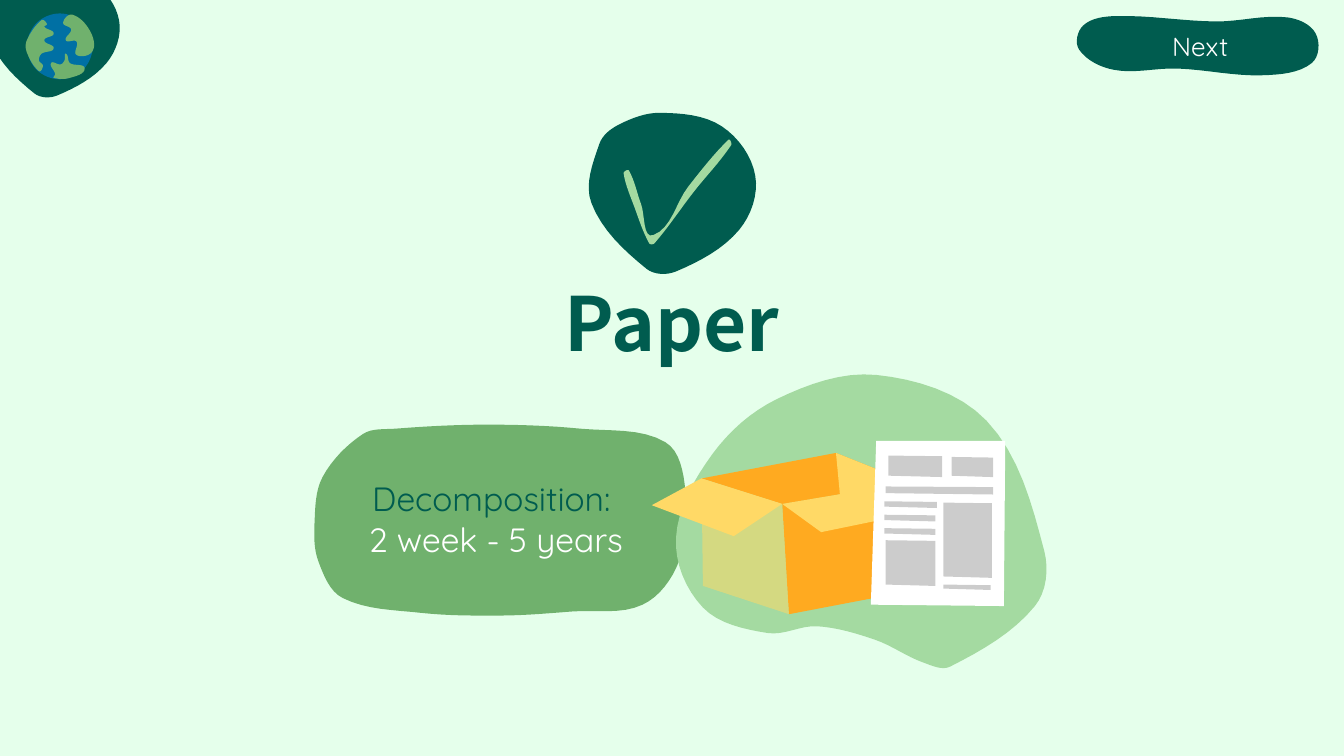
"""Build the "Paper" recycling slide with its decomposition time."""
import math
import pptx
import pptx.util
import pptx.dml.color
import pptx.enum.text
import pptx.oxml
import pptx.oxml.ns
from lxml import etree

PX = 9144
SLIDE_WIDTH = 1000
CURVE_STEPS = 8
RGB = pptx.dml.color.RGBColor
MINT = RGB.from_string("E5FFEB")
DARK_GREEN = RGB.from_string("005C4F")
LEAF_GREEN = RGB.from_string("70B16D")
PALE_GREEN = RGB.from_string("A4DAA1")
OCEAN = RGB.from_string("0070A4")
ORANGE = RGB.from_string("FFAA20")
YELLOW = RGB.from_string("FFD966")
WHITE = RGB.from_string("FFFFFF")
BLACK = RGB.from_string("000000")

LABELS = [
    ((78, 208, 844, 63), "Noto Sans CJK KR", 40, True, [("Paper", DARK_GREEN)]),
    ((260, 336, 218, 100), "Quicksand", 18, False,
     [("Decomposition: ", DARK_GREEN), ("2 week - 5 years", WHITE)]),
    ((817, 14, 152, 41), "Quicksand", 14, False, [("Next", WHITE)]),
]

TIME_PANEL = [
    (374, 458), (426, 455), (478, 450), (505, 418), (510, 365), (495, 329), (432, 319),
    (362, 316), (294, 319), (270, 323), (240, 355), (234, 390), (237, 418), (255, 445), (313, 456)]
NEXT_BUTTON = [
    (830, 12), (806, 19), (803, 37), (829, 52), (876, 51),
    (940, 56), (976, 47), (979, 25), (958, 13), (905, 16)]
BADGE = [
    (491, 84), (460, 93), (446, 107), (440, 151), (481, 200),
    (503, 202), (550, 171), (562, 131), (537, 94)]
CORNER = [((x - 438) * 0.78 - 8, (y - 84) * 0.78 - 21) for x, y in BADGE]
CHECK = [
    (542, 104), (512, 139), (486, 175), (477, 152), (468, 127), (464, 129),
    (472, 154), (483, 181), (487, 181), (516, 143), (544, 108)]
PAPER_BACKDROP = [
    (652, 279), (578, 297), (530, 338), (503, 400), (523, 452), (571, 471), (608, 466),
    (651, 476), (687, 493), (707, 496), (770, 451), (777, 410), (734, 313)]
GLOBE = [(44.5 + 24.5 * math.cos(k * math.pi / 4), 34.5 + 24.5 * math.sin(k * math.pi / 4))
         for k in range(8)]
LANDS = [
    [(31, 15), (20, 30), (20, 39), (29, 53), (32, 49), (29, 45),
     (31, 40), (40, 36), (33, 30), (40, 25), (33, 20), (35, 18)],
    [(54, 11), (47, 17), (53, 22), (49, 30), (57, 31), (57, 41), (69, 38), (67, 23)],
    [(49, 40), (48, 45), (45, 48), (38, 47), (41, 55), (40, 58), (52, 58), (63, 51), (52, 47)],
]

BOX_CORNERS = {
    "right": (677, 359), "front": (582, 375), "left": (522, 356), "back": (622, 337),
    "base left": (523, 436), "base front": (587, 457), "base right": (676, 440),
    "left flap": (485, 376), "front flap": (546, 399), "back fold": (626, 379),
    "right fold": (611, 396), "right flap": (713, 375),
}
BOX_FACES = [
    (ORANGE, 100, ["right", "front", "base front", "base right"]),
    (YELLOW, 53, ["left", "base left", "base front", "front"]),
    (ORANGE, 100, ["back", "left", "front", "right"]),
    (YELLOW, 100, ["left", "left flap", "front flap", "front"]),
    (YELLOW, 100, ["back", "back fold", "right"]),
    (YELLOW, 100, ["right", "front", "right fold", "right flap"]),
]
PAGE = [(652, 328), (648, 450), (747, 451), (748, 328)]
NEWS_BLOCKS = [
    (661, 339, 40, 15), (708, 340, 31, 14), (659, 362, 80, 5),
    (658, 373, 39, 4), (658, 383, 38, 4), (658, 393, 38, 4), (659, 402, 37, 33),
    (702, 374, 36, 55), (702, 435, 35, 3),
]


def trace(anchors):
    count = len(anchors)
    directions = []
    for i in range(count):
        (x0, y0), (x1, y1) = anchors[i - 1], anchors[(i + 1) % count]
        span = math.dist((x0, y0), (x1, y1))
        directions.append(((x1 - x0) / span, (y1 - y0) / span))
    outline = []
    for i in range(count):
        j = (i + 1) % count
        start, end = anchors[i], anchors[j]
        reach = math.dist(start, end) / 3
        first = [p + reach * d for p, d in zip(start, directions[i])]
        second = [p - reach * d for p, d in zip(end, directions[j])]
        for step in range(CURVE_STEPS):
            t = step / CURVE_STEPS
            weights = ((1 - t) ** 3, 3 * t * (1 - t) ** 2, 3 * t * t * (1 - t), t ** 3)
            outline.append(tuple(sum(w * point[axis] for w, point in
                                     zip(weights, (start, first, second, end)))
                                 for axis in (0, 1)))
    return outline


def tilt(left, top, width, height):
    right, bottom = left + width, top + height
    return [(left, top), (left, bottom), (right, bottom + 1), (right, top + 0.5)]


def draw(shapes, color, opacity, outline):
    corners = [(x * PX, y * PX) for x, y in outline]
    builder = shapes.build_freeform(*corners[0], scale=1.0)
    builder.add_line_segments(corners[1:], close=True)
    figure = builder.convert_to_shape()
    figure.shadow.inherit = False
    figure.fill.solid()
    figure.fill.fore_color.rgb = color
    figure.line.fill.background()
    if opacity < 100:
        fill_color = figure._element.spPr.find(".//" + pptx.oxml.ns.qn("a:srgbClr"))
        etree.SubElement(fill_color, pptx.oxml.ns.qn("a:alpha"), val=str(opacity * 1000))


def write(shapes, box, font_name, size, bold, lines):
    label = shapes.add_textbox(*(length * PX for length in box)).text_frame
    frame_format = {"word_wrap": True, "vertical_anchor": pptx.enum.text.MSO_ANCHOR.MIDDLE}
    frame_format.update({"margin_" + side: 10 * PX for side in ("left", "top", "right", "bottom")})
    for key, value in frame_format.items():
        setattr(label, key, value)
    paragraph = label.paragraphs[0]
    paragraph.alignment = pptx.enum.text.PP_ALIGN.CENTER
    for index, (words, color) in enumerate(lines):
        if index:
            paragraph.add_line_break()
        run = paragraph.add_run()
        run.text = words
        for key, value in {"name": font_name, "size": pptx.util.Pt(size), "bold": bold}.items():
            setattr(run.font, key, value)
        run.font.color.rgb = color


def main():
    deck = pptx.Presentation()
    deck.slide_width, deck.slide_height = SLIDE_WIDTH * PX, SLIDE_WIDTH * PX * 9 // 16
    slide = deck.slides.add_slide(deck.slide_layouts[6])
    slide.background.fill.solid()
    slide.background.fill.fore_color.rgb = MINT
    curved_groups = [
        [(LEAF_GREEN, TIME_PANEL)], [(DARK_GREEN, NEXT_BUTTON)],
        [(DARK_GREEN, BADGE), (PALE_GREEN, CHECK)],
        [(PALE_GREEN, PAPER_BACKDROP)], [(DARK_GREEN, CORNER)],
        [(OCEAN, GLOBE)] + [(LEAF_GREEN, land) for land in LANDS],
    ]
    groups = [[(color, 100, trace(curve)) for color, curve in group] for group in curved_groups]
    box = [(color, opacity, [BOX_CORNERS[corner] for corner in face])
           for color, opacity, face in BOX_FACES]
    news = [(BLACK, 20, tilt(*block)) for block in NEWS_BLOCKS]
    groups.append(box + [(WHITE, 100, PAGE)] + news)
    for group in groups:
        shapes = slide.shapes.add_group_shape().shapes if len(group) > 1 else slide.shapes
        for part in group:
            draw(shapes, *part)
    for label in LABELS:
        write(slide.shapes, *label)
    deck.save("out.pptx")


if __name__ == "__main__":
    main()
